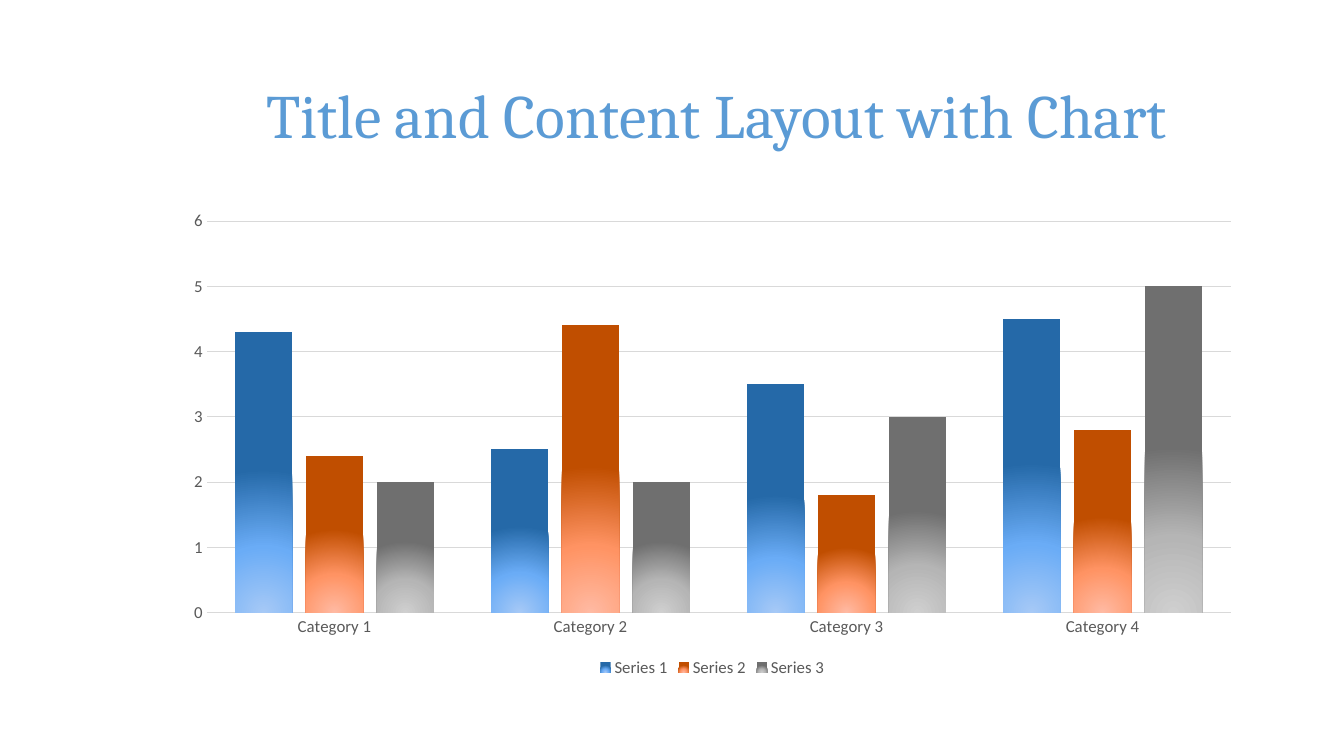
from dataclasses import dataclass

from pptx import Presentation
from pptx.chart.axis import CategoryAxis, ValueAxis
from pptx.chart.chart import Chart
from pptx.chart.data import CategoryChartData
from pptx.chart.series import BarSeries
from pptx.dml.color import RGBColor
from pptx.enum.chart import XL_CHART_TYPE as ChartType
from pptx.enum.chart import XL_LEGEND_POSITION as LegendPosition
from pptx.enum.chart import XL_TICK_MARK as TickMark
from pptx.enum.text import MSO_ANCHOR as Anchor
from pptx.enum.text import PP_ALIGN as Align
from pptx.oxml import parse_xml
from pptx.oxml.ns import nsdecls
from pptx.slide import Slide
from pptx.text.text import Font
from pptx.util import Inches, Pt

TITLE_BLUE = RGBColor(0x5B, 0x9B, 0xD5)
LABEL_GRAY = RGBColor(0x59, 0x59, 0x59)
LINE_GRAY = RGBColor(0xD9, 0xD9, 0xD9)
CATEGORIES = [f"Category {number}" for number in range(1, 5)]
GRADIENT_POSITIONS = (0, 46, 100)


@dataclass(frozen=True)
class ColumnSeries:
    name: str
    values: tuple[float, ...]
    colors: tuple[RGBColor, ...]


COLUMN_SERIES = [
    ColumnSeries("Series 1", (4.3, 2.5, 3.5, 4.5),
                 (RGBColor(0xA6, 0xC9, 0xF6), RGBColor(0x6A, 0xAC, 0xF6), RGBColor(0x25, 0x69, 0xA8))),
    ColumnSeries("Series 2", (2.4, 4.4, 1.8, 2.8),
                 (RGBColor(0xFF, 0xBA, 0xA3), RGBColor(0xFF, 0x93, 0x63), RGBColor(0xC0, 0x4E, 0x00))),
    ColumnSeries("Series 3", (2, 2, 3, 5),
                 (RGBColor(0xCF, 0xCF, 0xCF), RGBColor(0xB5, 0xB5, 0xB5), RGBColor(0x6F, 0x6F, 0x6F))),
]


def style_font(font: Font, name: str, size: float, color: RGBColor) -> None:
    font.name = name
    font.size = Pt(size)
    font.color.rgb = color


def fill_radial(series: BarSeries, colors: tuple[RGBColor, ...]) -> None:
    """Fill the columns with a circular gradient centred below their base."""
    stops = "".join(
        f'<a:gs pos="{position * 1000}"><a:srgbClr val="{color}"/></a:gs>'
        for position, color in zip(GRADIENT_POSITIONS, colors)
    )
    gradient = parse_xml(
        f'<a:gradFill {nsdecls("a")} rotWithShape="1"><a:gsLst>{stops}</a:gsLst>'
        '<a:path path="circle"><a:fillToRect l="50000" t="155000" r="50000" b="-55000"/>'
        "</a:path></a:gradFill>"
    )
    series._element.get_or_add_spPr().insert(0, gradient)


def style_axis(axis: CategoryAxis | ValueAxis) -> None:
    axis.major_tick_mark = TickMark.NONE
    axis.minor_tick_mark = TickMark.NONE
    style_font(axis.tick_labels.font, "Calibri", 12, LABEL_GRAY)


def style_chart(chart: Chart) -> None:
    chart.has_title = False
    chart.font.name = "Calibri"
    chart.font.size = Pt(10)

    # Axes and gridlines
    category_axis, value_axis = chart.category_axis, chart.value_axis
    style_axis(category_axis)
    style_axis(value_axis)
    category_axis.format.line.color.rgb = LINE_GRAY
    category_axis.format.line.width = Pt(1)
    value_axis.format.line.fill.background()
    value_axis.minimum_scale = 0
    value_axis.maximum_scale = 6
    value_axis.major_unit = 1
    value_axis.has_major_gridlines = True
    gridline = value_axis.major_gridlines.format.line
    gridline.color.rgb = LINE_GRAY
    gridline.width = Pt(0.75)

    # Legend
    chart.has_legend = True
    chart.legend.position = LegendPosition.BOTTOM
    chart.legend.include_in_layout = False
    style_font(chart.legend.font, "Calibri", 12, LABEL_GRAY)

    # Columns
    plot = chart.plots[0]
    plot.gap_width = 100
    plot.overlap = -24
    plot.vary_by_categories = False
    for series, column_series in zip(plot.series, COLUMN_SERIES):
        series.invert_if_negative = False
        fill_radial(series, column_series.colors)


def add_column_chart(slide: Slide) -> None:
    chart_data = CategoryChartData()
    chart_data.categories = CATEGORIES
    for column_series in COLUMN_SERIES:
        chart_data.add_series(column_series.name, column_series.values)
    frame = slide.shapes.add_chart(
        ChartType.COLUMN_CLUSTERED, Inches(1.71), Inches(2), Inches(10.71), Inches(4.76), chart_data
    )
    style_chart(frame.chart)


def add_title(slide: Slide) -> None:
    title = slide.shapes.add_textbox(Inches(2.54), Inches(0.4), Inches(9.88), Inches(1.45))
    text_frame = title.text_frame
    text_frame.word_wrap = True
    text_frame.vertical_anchor = Anchor.MIDDLE
    text_frame.text = "Title and Content Layout with Chart"
    paragraph = text_frame.paragraphs[0]
    paragraph.alignment = Align.LEFT
    style_font(paragraph.runs[0].font, "Cambria", 44, TITLE_BLUE)


def main() -> None:
    presentation = Presentation()
    presentation.slide_width = Inches(13.33)
    presentation.slide_height = Inches(7.5)
    slide = presentation.slides.add_slide(presentation.slide_layouts[6])
    add_column_chart(slide)
    add_title(slide)
    presentation.save("out.pptx")


if __name__ == "__main__":
    main()
